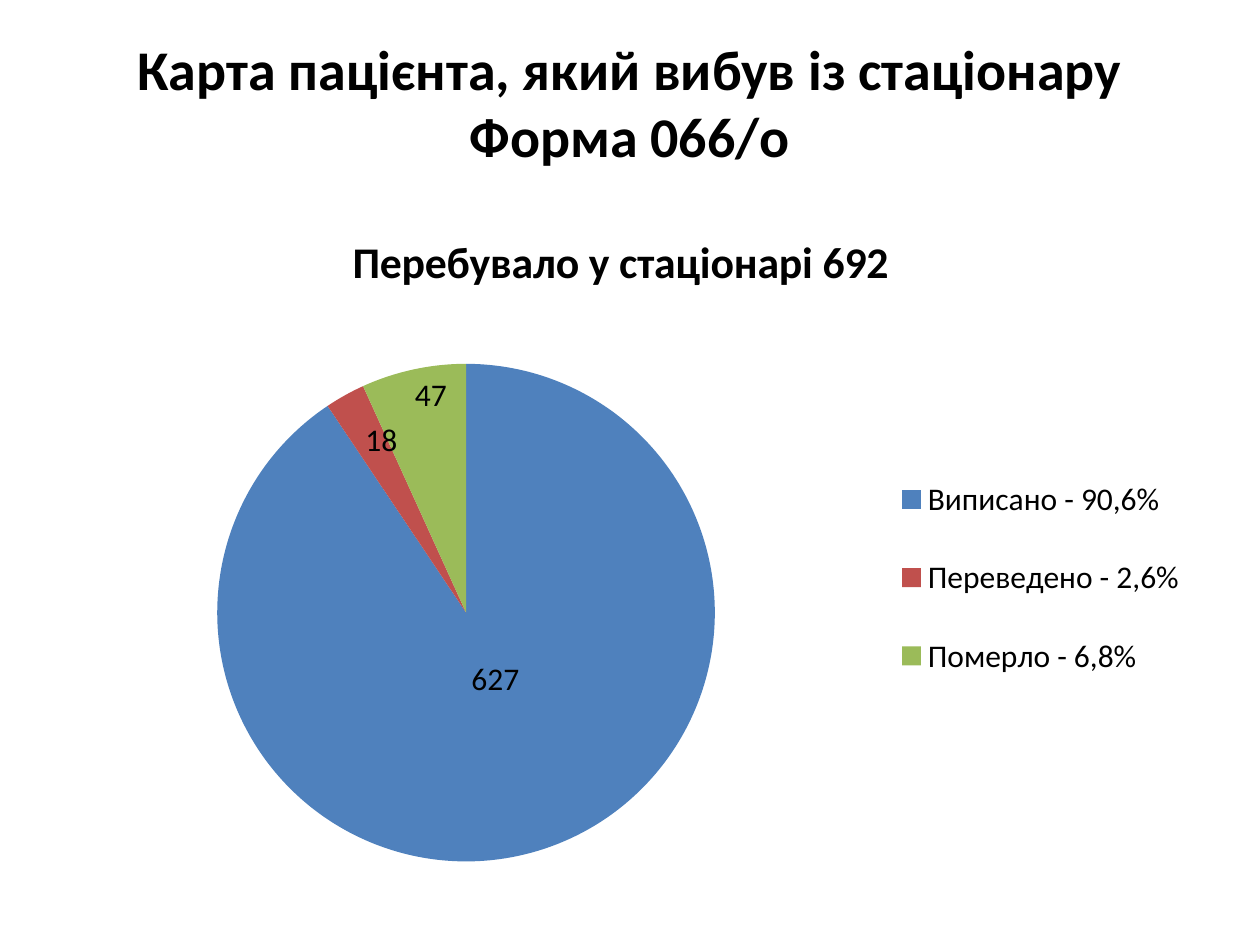
import pptx
import pptx.chart.data
import pptx.dml.color
import pptx.enum.chart
import pptx.enum.text
import pptx.oxml
import pptx.oxml.ns
import pptx.util

PX = 914400 / 126
TITLE = "Карта пацієнта, який вибув із стаціонару\vФорма 066/о"
CHART_TITLE = "Перебувало у стаціонарі 692"
OUTCOMES = [
    ("Виписано - 90,6%", 627, "4F81BD"),
    ("Переведено - 2,6%", 18, "C0504D"),
    ("Померло - 6,8%", 47, "9BBB59"),
]
LABEL_SHIFTS = {0: (-17, -145), 1: (17, 19)}


def px(n):
    return pptx.util.Emu(round(n * PX))


def color(value):
    return pptx.dml.color.RGBColor.from_string(value)


def style_font(font, size, ink, face, bold=False):
    font.size = pptx.util.Pt(size)
    font.name = face
    font.bold = bold
    font.color.rgb = color(ink)


def write(tf, text, align=pptx.enum.text.PP_ALIGN.CENTER, **style):
    p = tf.paragraphs[0]
    p.text = text
    p.alignment = align
    for r in p.runs:
        style_font(r.font, **style)


def manual_layout(**values):
    items = "".join(f'<c:{tag} val="{value}"/>' for tag, value in values.items())
    return pptx.oxml.parse_xml(
        f'<c:layout {pptx.oxml.ns.nsdecls("c")}><c:manualLayout>{items}'
        "</c:manualLayout></c:layout>"
    )


def box_layout(box, size, **target):
    x, y, w, h = box
    width, height = size
    return manual_layout(
        **target, xMode="edge", yMode="edge",
        x=round(x / width, 3), y=round(y / height, 3),
        w=round(w / width, 3), h=round(h / height, 3),
    )


class Deck:
    """Hold the style and the current slide, and add elements to it."""

    def __init__(self, prs, face="Calibri", ink="000000"):
        self.style = {"face": face, "ink": ink}
        self.s = prs.slides.add_slide(prs.slide_layouts[5])

    def title(self, text, x, y, w, h, size):
        sp = self.s.shapes.title
        sp.left, sp.top, sp.width, sp.height = map(px, (x, y, w, h))
        tf = sp.text_frame
        tf.word_wrap = True
        tf.vertical_anchor = pptx.enum.text.MSO_ANCHOR.MIDDLE
        write(tf, text, size=size, bold=True, **self.style)

    def pie(self, title, rows, x, y, w, h, plot_box, legend_box, shifts):
        data = pptx.chart.data.CategoryChartData()
        data.categories = [name for name, _, _ in rows]
        data.add_series(title, [value for _, value, _ in rows])
        kind = pptx.enum.chart.XL_CHART_TYPE.PIE
        chart = self.s.shapes.add_chart(kind, *map(px, (x, y, w, h)), data).chart
        style_font(chart.font, size=18, **self.style)
        chart.has_title = True
        write(chart.chart_title.text_frame, title, size=25, bold=True, **self.style)
        chart.chart_title.include_in_layout = False

        chart.has_legend = True
        legend = chart.legend
        legend.position = pptx.enum.chart.XL_LEGEND_POSITION.RIGHT
        legend.include_in_layout = False
        legend._element.find(pptx.oxml.ns.qn("c:legendPos")).addnext(
            box_layout(legend_box, (w, h)))

        area = chart._chartSpace.chart.plotArea
        for old in area.findall(pptx.oxml.ns.qn("c:layout")):
            area.remove(old)
        area.insert(0, box_layout(plot_box, (w, h), layoutTarget="inner"))

        plot = chart.plots[0]
        plot.vary_by_categories = True
        series = plot.series[0]
        inside = pptx.enum.chart.XL_LABEL_POSITION.INSIDE_END
        labels = series.data_labels
        labels.show_value = True
        labels.position = inside
        style_font(labels.font, size=18, **self.style)
        for i, (_, _, fill) in enumerate(rows):
            point = series.points[i]
            point.format.fill.solid()
            point.format.fill.fore_color.rgb = color(fill)
        for i, (dx, dy) in shifts.items():
            label = series.points[i].data_label
            label.position = inside
            style_font(label.font, size=18, **self.style)
        for dlbl in labels._element.findall(pptx.oxml.ns.qn("c:dLbl")):
            idx = dlbl.find(pptx.oxml.ns.qn("c:idx"))
            dx, dy = shifts[int(idx.get("val"))]
            idx.addnext(manual_layout(x=round(dx / w, 3), y=round(dy / h, 3)))


def main():
    prs = pptx.Presentation()
    prs.slide_width, prs.slide_height = px(1260), px(945)
    deck = Deck(prs)
    deck.title(TITLE, 63, 38, 1134, 127, size=32)
    deck.pie(
        CHART_TITLE, OUTCOMES, 15, 204, 1211, 714,
        plot_box=(202, 160, 498, 498), legend_box=(875, 236, 300, 275),
        shifts=LABEL_SHIFTS,
    )
    prs.save("out.pptx")


if __name__ == "__main__":
    main()
